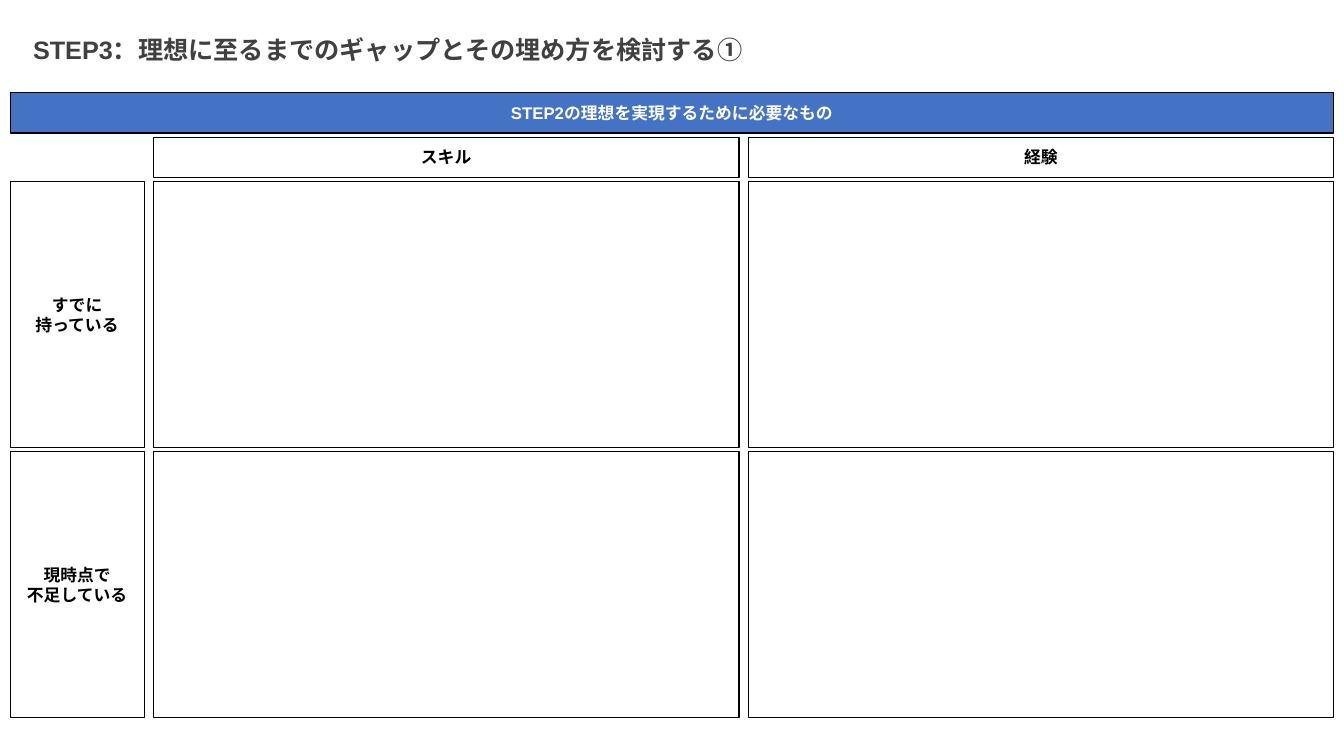
from dataclasses import dataclass

from pptx import Presentation
from pptx.dml.color import RGBColor
from pptx.enum.shapes import MSO_SHAPE
from pptx.enum.text import MSO_ANCHOR, MSO_AUTO_SIZE, PP_ALIGN
from pptx.util import Inches, Pt

RECT = MSO_SHAPE.RECTANGLE
MIDDLE = MSO_ANCHOR.MIDDLE
CENTER = PP_ALIGN.CENTER
LEFT = PP_ALIGN.LEFT
GROW = MSO_AUTO_SIZE.SHAPE_TO_FIT_TEXT


@dataclass(frozen=True)
class Theme:
    font: str = "Arial"
    blue: str = "4472C4"
    white: str = "FFFFFF"
    black: str = "000000"
    gray: str = "404040"
    title: float = 18
    label: float = 12
    line: float = 0.75


class Page:
    def __init__(self, slide, theme):
        self.slide = slide
        self.theme = theme

    def text(self, frame, lines, size, color, align):
        for i, line in enumerate(lines):
            para = frame.paragraphs[0] if i == 0 else frame.add_paragraph()
            para.alignment = align
            run = para.add_run()
            run.text = line
            font = run.font
            font.name = self.theme.font
            font.size = Pt(size)
            font.bold = True
            font.color.rgb = RGBColor.from_string(color)

    def title(self, x, y, w, h, words):
        box = self.slide.shapes.add_textbox(
            Inches(x), Inches(y), Inches(w), Inches(h))
        frame = box.text_frame
        frame.word_wrap = True
        frame.auto_size = GROW
        self.text(frame, [words], self.theme.title, self.theme.gray, LEFT)

    def box(self, x, y, w, h, lines=(), fill=None, color=None):
        shape = self.slide.shapes.add_shape(
            RECT, Inches(x), Inches(y), Inches(w), Inches(h))
        shape.shadow.inherit = False
        if fill:
            shape.fill.solid()
            shape.fill.fore_color.rgb = RGBColor.from_string(fill)
        else:
            shape.fill.background()
        shape.line.color.rgb = RGBColor.from_string(self.theme.black)
        shape.line.width = Pt(self.theme.line)
        if lines:
            frame = shape.text_frame
            frame.word_wrap = False
            frame.vertical_anchor = MIDDLE
            self.text(frame, lines, self.theme.label,
                      color or self.theme.black, CENTER)


def main():
    deck = Presentation()
    deck.slide_width = Inches(13.33)
    deck.slide_height = Inches(7.5)
    theme = Theme()
    page = Page(deck.slides.add_slide(deck.slide_layouts[6]), theme)

    # Grid measures
    edge, side = 0.1, 1.33
    cols, wide = (1.52, 7.42), 5.81
    rows, tall = (1.8, 4.48), 2.64
    bar = 0.4

    # Title and banner
    page.title(0.23, 0.29, 8.86, bar,
               "STEP3：理想に至るまでのギャップとその埋め方を検討する①")
    page.box(edge, 0.92, cols[1] + wide - edge, bar,
             ["STEP2の理想を実現するために必要なもの"], theme.blue, theme.white)

    # Column heads
    for x, head in zip(cols, ("スキル", "経験")):
        page.box(x, 1.36, wide, bar, [head])

    # Row labels and blank cells
    labels = (("すでに", "持っている"), ("現時点で", "不足している"))
    for y, label in zip(rows, labels):
        page.box(edge, y, side, tall, label)
        for x in cols:
            page.box(x, y, wide, tall, fill=theme.white)

    deck.save("out.pptx")


if __name__ == "__main__":
    main()
